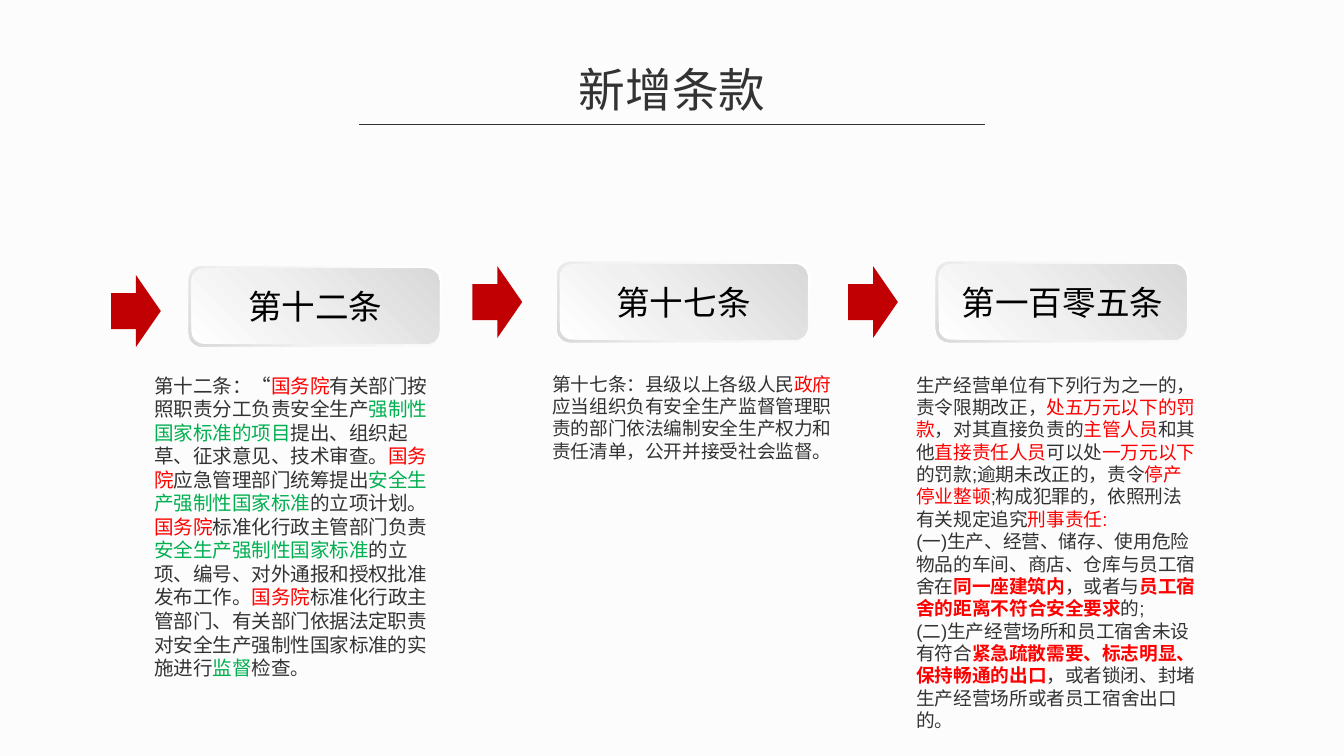
from dataclasses import dataclass

from lxml import etree
from pptx import Presentation
from pptx import util as u
from pptx.dml.color import RGBColor
from pptx.enum import lang, shapes, text
from pptx.oxml import ns


@dataclass(frozen=True)
class Theme:
    back: str = "FCFCFC"
    ink: str = "333333"
    black: str = "000000"
    red: str = "FF0000"
    green: str = "00B050"
    arrow: str = "C00002"
    rim: tuple = ((0, "FFFFFF"), (62, "F2F2F2"), (100, "D9D9D9"))
    face: tuple = ((0, "FFFFFF"), (42, "F0F0F0"), (100, "D9D9D9"))
    heading: str = "Noto Sans CJK SC"
    body: str = "Arial"
    title_size: float = 25
    label_size: float = 18
    large: float = 10.5
    small: float = 10
    leading: float = 1.2


T = Theme()
INK = {"color": T.ink}
RED = {"color": T.red}
GREEN = {"color": T.green}
STRONG = {"color": T.red, "bold": True}
SMALL = {"color": T.ink, "size": T.small}


def cm(box):
    return [u.Cm(v) for v in box]


def rgb(value):
    return RGBColor.from_string(value)


def style_paragraph(p, name, size, color, align):
    p.alignment = align
    p.line_spacing = u.Pt(size * T.leading)
    font = p.font
    font.name = name
    font.size = u.Pt(size)
    font.color.rgb = rgb(color)
    font.language_id = lang.MSO_LANGUAGE_ID.SIMPLIFIED_CHINESE
    p._p.pPr.set("hangingPunct", "0")
    latin = p._p.pPr.find(ns.qn("a:defRPr")).find(ns.qn("a:latin"))
    ea = etree.Element(ns.qn("a:ea"))
    ea.set("typeface", T.heading)
    latin.addnext(ea)


def fill_gradient(sp, stops, angle):
    sp.fill.gradient()
    sp.fill.gradient_angle = angle
    gs_list = sp._element.spPr.find(ns.qn("a:gradFill")).find(ns.qn("a:gsLst"))
    for gs in list(gs_list):
        gs_list.remove(gs)
    for position, color in stops:
        gs = etree.SubElement(gs_list, ns.qn("a:gs"), pos=str(position * 1000))
        etree.SubElement(gs, ns.qn("a:srgbClr"), val=color)


def draw_title(s, box, wording, rule_width):
    x, y, w, h = box
    sp = s.shapes.title
    sp.left, sp.top, sp.width, sp.height = cm(box)
    tf = sp.text_frame
    tf.auto_size = text.MSO_AUTO_SIZE.NONE
    tf.vertical_anchor = text.MSO_ANCHOR.MIDDLE
    p = tf.paragraphs[0]
    p.add_run().text = wording
    style_paragraph(p, T.heading, T.title_size, T.ink, text.PP_ALIGN.CENTER)

    start = x + (w - rule_width) / 2
    rule = s.shapes.add_connector(
        shapes.MSO_CONNECTOR.STRAIGHT, *cm((start, y + h, start + rule_width, y + h)))
    rule.line.color.rgb = rgb(T.ink)
    rule.line.width = u.Pt(0.75)
    etree.SubElement(rule._element.spPr, ns.qn("a:effectLst"))


def draw_arrow(s, box):
    sp = s.shapes.add_shape(shapes.MSO_SHAPE.RIGHT_ARROW, *cm(box))
    sp.shadow.inherit = False
    sp.fill.solid()
    sp.fill.fore_color.rgb = rgb(T.arrow)
    sp.line.fill.background()


def draw_badge(s, box, label):
    x, y, w, h = box
    inset = 0.05
    inner = (x + inset, y + inset, w - 2 * inset, h - 2 * inset)
    group = s.shapes.add_group_shape()
    for part, stops, angle in ((box, T.rim, 225), (inner, T.face, 45)):
        sp = group.shapes.add_shape(shapes.MSO_SHAPE.ROUNDED_RECTANGLE, *cm(part))
        sp.shadow.inherit = False
        fill_gradient(sp, stops, angle)
        sp.line.fill.background()
    tf = sp.text_frame
    tf.vertical_anchor = text.MSO_ANCHOR.MIDDLE
    p = tf.paragraphs[0]
    p.add_run().text = label
    style_paragraph(p, T.heading, T.label_size, T.black, text.PP_ALIGN.CENTER)


def draw_article(s, box, paragraphs, size):
    tf = s.shapes.add_textbox(*cm(box)).text_frame
    tf.word_wrap = True
    tf.margin_left = tf.margin_top = tf.margin_right = tf.margin_bottom = 0
    for i, runs in enumerate(paragraphs):
        p = tf.add_paragraph() if i else tf.paragraphs[0]
        style_paragraph(p, T.body, size, T.ink, text.PP_ALIGN.LEFT)
        for look, wording in runs:
            r = p.add_run()
            r.text = wording
            r.font.color.rgb = rgb(look["color"])
            if "bold" in look:
                r.font.bold = look["bold"]
            if "size" in look:
                r.font.size = u.Pt(look["size"])


ARTICLE_12 = [[
    (INK, "第十二条：“"), (RED, "国务院"),
    (INK, "有关部门按照职责分工负责安全生产"), (GREEN, "强制性国家标准的项目"),
    (INK, "提出、组织起草、征求意见、技术审查。"), (RED, "国务院"),
    (INK, "应急管理部门统筹提出"), (GREEN, "安全生产强制性国家标准"),
    (INK, "的立项计划。"), (RED, "国务院"),
    (INK, "标准化行政主管部门负责"), (GREEN, "安全生产强制性国家标准"),
    (INK, "的立项、编号、对外通报和授权批准发布工作。"), (RED, "国务院"),
    (INK, "标准化行政主管部门、有关部门依据法定职责对安全生产强制性国家标准的实施进行"),
    (GREEN, "监督"), (INK, "检查"), (SMALL, "。"),
]]
ARTICLE_17 = [[
    (INK, "第十七条：县级以上各级人民"), (RED, "政府"),
    (INK, "应当组织负有安全生产监督管理职责的部门依法编制安全生产权力和责任清单，公开并接受社会监督。"),
]]
ARTICLE_105 = [
    [
        (INK, "生产经营单位有下列行为之一的，责令限期改正，"), (RED, "处五万元以下的罚款"),
        (INK, "，对其直接负责的"), (RED, "主管人员"), (INK, "和其他"), (RED, "直接责任人员"),
        (INK, "可以处"), (RED, "一万元以下"), (INK, "的罚款;逾期未改正的，责令"),
        (RED, "停产停业整顿"), (INK, ";构成犯罪的，依照刑法有关规定追究"), (RED, "刑事责任:"),
    ],
    [
        (INK, "(一)生产、经营、储存、使用危险物品的车间、商店、仓库与员工宿舍在"),
        (STRONG, "同一座建筑内"), (INK, "，或者与"),
        (STRONG, "员工宿舍的距离不符合安全要求"), (INK, "的;"),
    ],
    [
        (INK, "(二)生产经营场所和员工宿舍未设有符合"),
        (STRONG, "紧急疏散需要、标志明显、保持畅通的出口"),
        (INK, "，或者锁闭、封堵生产经营场所或者员工宿舍出口的。"),
    ],
]
COLUMNS = [
    ("第十二条", (2.1, 5.2), (3.57, 5.03), (2.92, 7.06, 5.36, 5.84), ARTICLE_12, T.large),
    ("第十七条", (8.93, 5.03), (10.53, 4.95), (10.44, 7.04, 5.36, 1.7), ARTICLE_17, T.small),
    ("第一百零五条", (16.03, 5.03), (17.69, 4.95), (17.32, 7.06, 5.36, 6.4), ARTICLE_105, T.small),
]


def main():
    prs = Presentation()
    prs.slide_width, prs.slide_height = u.Cm(25.4), u.Cm(14.29)
    s = prs.slides.add_slide(prs.slide_layouts[5])
    s.background.fill.solid()
    s.background.fill.fore_color.rgb = rgb(T.back)
    draw_title(s, (8, 1.02, 9.4, 1.33), "新增条款", 11.84)
    for label, arrow, badge, article, paragraphs, size in COLUMNS:
        draw_arrow(s, (*arrow, 0.94, 1.36))
        draw_badge(s, (*badge, 4.78, 1.52), label)
        draw_article(s, article, paragraphs, size)
    prs.save("out.pptx")


if __name__ == "__main__":
    main()
